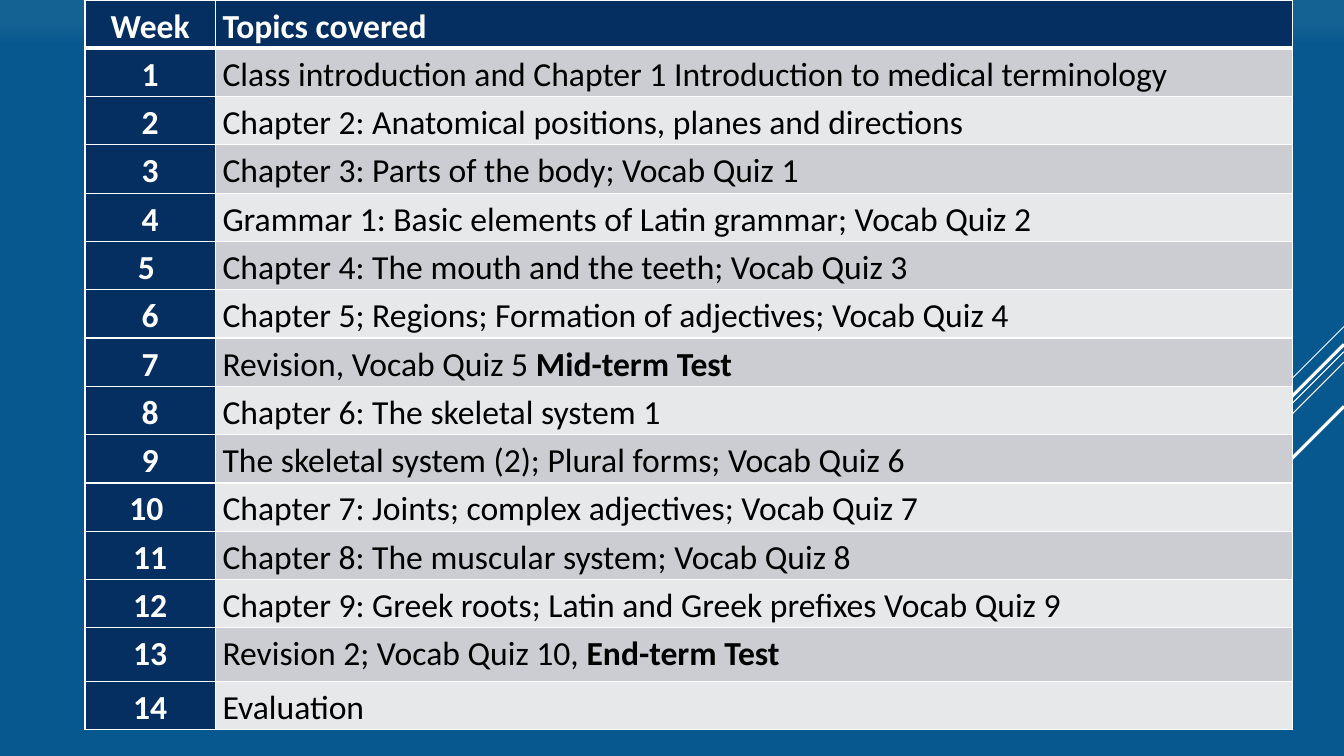
from dataclasses import dataclass

import lxml.etree
import pptx
import pptx.dml.color
import pptx.enum.shapes
import pptx.enum.text
import pptx.oxml.ns
import pptx.presentation
import pptx.slide
import pptx.table
import pptx.util

EMU_PER_PX = 9525
SLIDE_WIDTH, SLIDE_HEIGHT = 1280, 720
TABLE_LEFT, TABLE_TOP = 81, 0
COLUMN_WIDTHS = (124, 1026)
ROW_HEIGHT = 46
TALL_ROW_HEIGHT = 51
TALL_WEEK = 13
CELL_INSET = 7

WHITE = pptx.dml.color.RGBColor(0xFF, 0xFF, 0xFF)
BLACK = pptx.dml.color.RGBColor(0x00, 0x00, 0x00)
NAVY = pptx.dml.color.RGBColor(0x05, 0x2F, 0x61)
DARK_BAND = pptx.dml.color.RGBColor(0xCC, 0xCD, 0xD2)
LIGHT_BAND = pptx.dml.color.RGBColor(0xE7, 0xE8, 0xEA)
BACKGROUND_TOP = pptx.dml.color.RGBColor(0x14, 0x61, 0x94)
BACKGROUND_MAIN = pptx.dml.color.RGBColor(0x06, 0x58, 0x8E)


@dataclass(frozen=True)
class Diagonal:
    top: int
    run: int
    weight: float


@dataclass(frozen=True)
class Week:
    label: str
    topic: str
    test: str = ""
    space_before: int = 6
    space_after: int = 10


DIAGONALS = (
    Diagonal(311, 96, 0.75),
    Diagonal(335, 313, 0.75),
    Diagonal(345, 199, 0.75),
    Diagonal(328, 184, 2.25),
    Diagonal(387, 134, 2.25),
)

WEEKS = (
    Week("1", "Class introduction and Chapter 1 Introduction to medical terminology"),
    Week("2", "Chapter 2: Anatomical positions, planes and directions"),
    Week("3", "Chapter 3: Parts of the body; Vocab Quiz 1"),
    Week("4", "Grammar 1: Basic elements of Latin grammar; Vocab Quiz 2"),
    Week("5 ", "Chapter 4: The mouth and the teeth; Vocab Quiz 3", "", 0, 6),
    Week("6", "Chapter 5; Regions; Formation of adjectives; Vocab Quiz 4", "", 0, 6),
    Week("7", "Revision, Vocab Quiz 5 ", "Mid-term Test", 0, 6),
    Week("8", "Chapter 6: The skeletal system 1"),
    Week("9", "The skeletal system (2); Plural forms; Vocab Quiz 6"),
    Week("10 ", "Chapter 7: Joints; complex adjectives; Vocab Quiz 7"),
    Week("11", "Chapter 8: The muscular system; Vocab Quiz 8"),
    Week("12", "Chapter 9: Greek roots; Latin and Greek prefixes Vocab Quiz 9"),
    Week("13", "Revision 2; Vocab Quiz 10, ", "End-term Test"),
    Week("14", "Evaluation"),
)


def px(length: int) -> pptx.util.Emu:
    return pptx.util.Emu(length * EMU_PER_PX)


def paint_background(slide: pptx.slide.Slide) -> None:
    fill = slide.background.fill
    fill.gradient()
    fill.gradient_angle = 270
    stops = ((0.03, BACKGROUND_TOP), (0.06, BACKGROUND_MAIN))
    for stop, (position, color) in zip(fill.gradient_stops, stops):
        stop.position = position
        stop.color.rgb = color


def draw_diagonal(slide: pptx.slide.Slide, diagonal: Diagonal) -> None:
    connector = slide.shapes.add_connector(
        pptx.enum.shapes.MSO_CONNECTOR.STRAIGHT,
        px(SLIDE_WIDTH),
        px(diagonal.top),
        px(SLIDE_WIDTH - diagonal.run),
        px(diagonal.top + diagonal.run),
    )
    connector.line.color.rgb = WHITE
    connector.line.width = pptx.util.Pt(diagonal.weight)
    properties = connector._element.spPr
    lxml.etree.SubElement(properties, pptx.oxml.ns.qn("a:effectLst"))


def draw_borders(cell: pptx.table._Cell, bottom_weight: int) -> None:
    properties = cell._tc.get_or_add_tcPr()
    weights = {"a:lnL": 1, "a:lnR": 1, "a:lnT": 1, "a:lnB": bottom_weight}
    for tag, weight in weights.items():
        line = lxml.etree.SubElement(
            properties, pptx.oxml.ns.qn(tag), w=str(pptx.util.Pt(weight))
        )
        fill = lxml.etree.SubElement(line, pptx.oxml.ns.qn("a:solidFill"))
        lxml.etree.SubElement(fill, pptx.oxml.ns.qn("a:srgbClr"), val=str(WHITE))


def fill_cell(
    cell: pptx.table._Cell,
    texts: tuple[tuple[str, bool], ...],
    font_color: pptx.dml.color.RGBColor,
    fill_color: pptx.dml.color.RGBColor,
    centred: bool = False,
    space_before: int = 6,
    space_after: int = 10,
    bottom_weight: int = 1,
) -> None:
    draw_borders(cell, bottom_weight)
    cell.fill.solid()
    cell.fill.fore_color.rgb = fill_color
    cell.margin_left = cell.margin_right = px(CELL_INSET)
    cell.margin_top = cell.margin_bottom = 0
    paragraph = cell.text_frame.paragraphs[0]
    alignment = pptx.enum.text.PP_ALIGN
    paragraph.alignment = alignment.CENTER if centred else alignment.LEFT
    paragraph.line_spacing = 1.15
    paragraph.space_before = pptx.util.Pt(space_before)
    paragraph.space_after = pptx.util.Pt(space_after)
    for text, bold in texts:
        run = paragraph.add_run()
        run.text = text
        run.font.name = "Calibri"
        run.font.size = pptx.util.Pt(24)
        run.font.bold = bold
        run.font.color.rgb = font_color


def draw_schedule(slide: pptx.slide.Slide) -> None:
    row_count = len(WEEKS) + 1
    table = slide.shapes.add_table(
        row_count,
        len(COLUMN_WIDTHS),
        px(TABLE_LEFT),
        px(TABLE_TOP),
        px(sum(COLUMN_WIDTHS)),
        px(ROW_HEIGHT * (row_count - 1) + TALL_ROW_HEIGHT),
    ).table
    for column, width in zip(table.columns, COLUMN_WIDTHS):
        column.width = px(width)
    for number, row in enumerate(table.rows):
        row.height = px(TALL_ROW_HEIGHT if number == TALL_WEEK else ROW_HEIGHT)

    for column, heading in enumerate(("Week", "Topics covered")):
        fill_cell(
            table.cell(0, column), ((heading, True),), WHITE, NAVY,
            centred=column == 0, bottom_weight=3,
        )
    for number, week in enumerate(WEEKS, start=1):
        fill_cell(table.cell(number, 0), ((week.label, True),), WHITE, NAVY, centred=True)
        texts = ((week.topic, False),)
        if week.test:
            texts += ((week.test, True),)
        fill_cell(
            table.cell(number, 1), texts, BLACK,
            DARK_BAND if number % 2 else LIGHT_BAND,
            space_before=week.space_before, space_after=week.space_after,
        )


def main() -> None:
    presentation = pptx.Presentation()
    presentation.slide_width = px(SLIDE_WIDTH)
    presentation.slide_height = px(SLIDE_HEIGHT)
    slide = presentation.slides.add_slide(presentation.slide_layouts[6])
    paint_background(slide)
    for diagonal in DIAGONALS:
        draw_diagonal(slide, diagonal)
    draw_schedule(slide)
    presentation.save("out.pptx")


if __name__ == "__main__":
    main()
